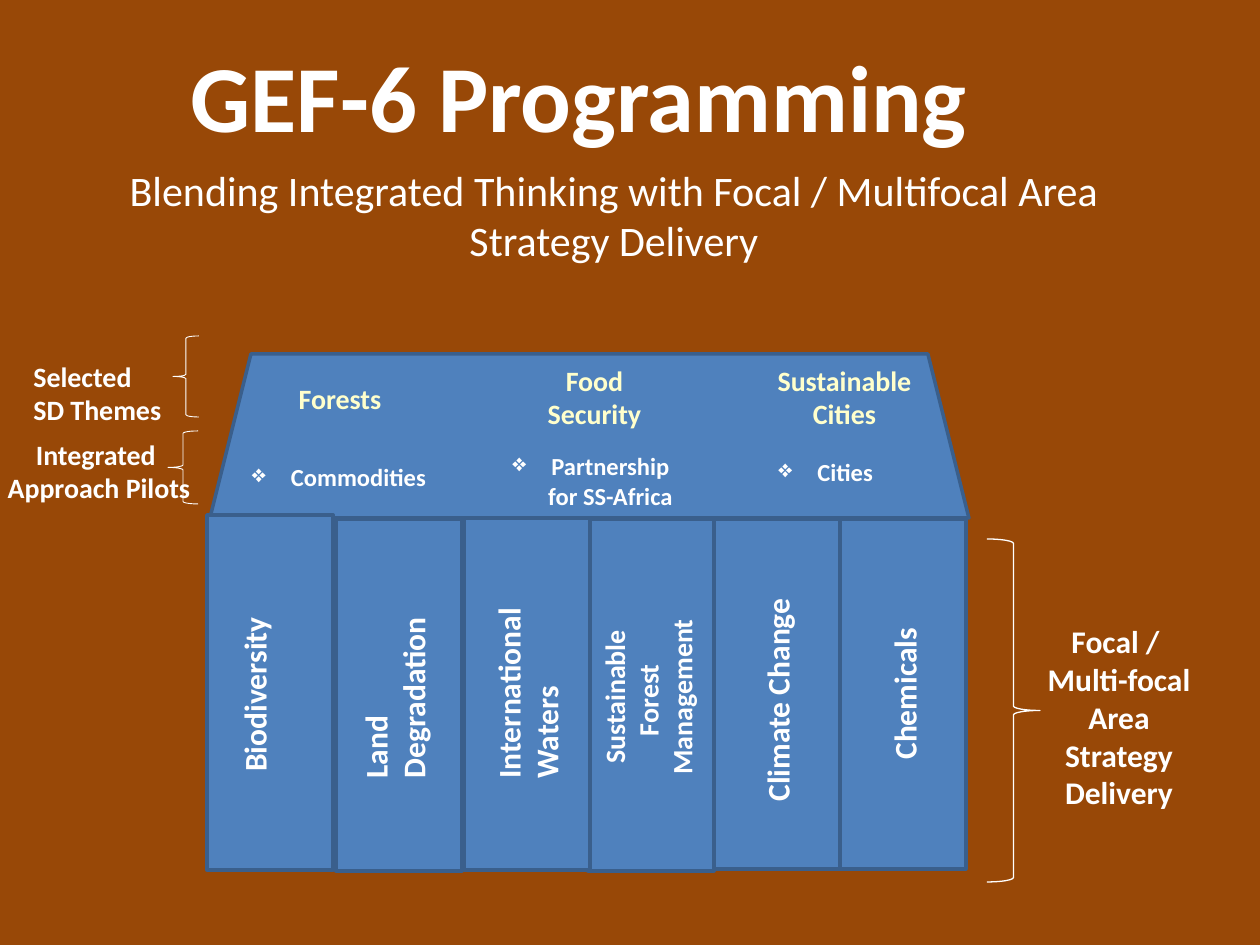
from lxml.etree import SubElement
from pptx import Presentation
from pptx.dml.color import RGBColor
from pptx.enum.shapes import MSO_SHAPE
from pptx.enum.text import MSO_ANCHOR, MSO_AUTO_SIZE, PP_ALIGN
from pptx.oxml.ns import qn
from pptx.util import Emu, Pt

COLORS = {
    "background": "984807",
    "block": "4F81BD",
    "edge": "3A5F8C",
    "text": "FFFFFF",
    "theme": "FFFFCC",
}
SLIDE_SIZE = (1260, 945)
BULLET_INDENT = 39

TITLE = ("GEF-6 Programming", (174, 32, 810, 127))
SUBTITLE = (
    "Blending Integrated Thinking with Focal / Multifocal Area Strategy Delivery",
    (105, 158, 1018, 115),
)
ROOF = (210, 354, 759, 164)
PILLARS = [
    ("Biodiversity", (207, 515, 126, 355), (229, 616, 63, 168), {}),
    ("Land \nDegradation", (336, 519, 126, 352), (350, 616, 102, 175), {}),
    ("International \nWaters", (464, 518, 126, 352), (483, 599, 102, 192), {}),
    ("Sustainable\nForest \nManagement", (588, 519, 126, 352), (591, 612, 127, 170),
     {"size": 16, "align": PP_ALIGN.CENTER}),
    ("Climate Change", (714, 519, 126, 350), (752, 597, 63, 217), {}),
    ("Chemicals", (840, 519, 126, 350), (879, 627, 63, 145), {}),
]
THEMES = [
    ("Forests", (285, 375, 110, 47)),
    ("Food\nSecurity", (534, 357, 121, 81)),
    ("Sustainable\nCities", (764, 357, 161, 81)),
]
PILOTS = [
    ("Commodities", (238, 456, 202, 43), PP_ALIGN.CENTER, 0),
    ("Partnership\nfor SS-Africa", (432, 445, 255, 72), PP_ALIGN.CENTER, 1),
    ("Cities", (766, 451, 121, 43), PP_ALIGN.LEFT, 0),
]
SIDE_LABELS = [
    (["Selected \nSD Themes"], (21, 353, 155, 81), 16, PP_ALIGN.LEFT),
    (["Integrated \nApproach Pilots"], (-6, 431, 210, 81), 16, PP_ALIGN.CENTER),
    (["Focal / ", "Multi-focal\nArea\nStrategy\nDelivery"], (1034, 616, 170, 204), 18,
     PP_ALIGN.CENTER),
]
BRACES = [
    (MSO_SHAPE.LEFT_BRACE, (173, 336, 26, 81), 0.5),
    (MSO_SHAPE.LEFT_BRACE, (168, 431, 30, 73), 0.5),
    (MSO_SHAPE.RIGHT_BRACE, (987, 539, 53, 343), 0.75),
]


def px(value):
    return Emu(round(value * 914400 / 126))


def color(name):
    return RGBColor.from_string(COLORS[name])


def add_bullet(paragraph, level):
    paragraph.level = level
    properties = paragraph._p.get_or_add_pPr()
    properties.set("marL", str(px(BULLET_INDENT + 63 * level)))
    properties.set("indent", str(px(-BULLET_INDENT)))
    SubElement(properties, qn("a:buChar")).set("char", "❖")


def write_text(shape, paragraphs, size=18, bold=True, tint="text", align=PP_ALIGN.LEFT,
               wrap=False, vertical=False, bullet_level=None):
    frame = shape.text_frame
    frame.word_wrap = wrap
    frame.auto_size = MSO_AUTO_SIZE.SHAPE_TO_FIT_TEXT
    frame.vertical_anchor = MSO_ANCHOR.TOP
    if vertical:
        frame._txBody.bodyPr.set("vert", "vert270")
    for index, text in enumerate(paragraphs):
        paragraph = frame.add_paragraph() if index else frame.paragraphs[0]
        paragraph.text = text
        paragraph.alignment = align
        if bullet_level is not None:
            add_bullet(paragraph, bullet_level)
        for run in paragraph.runs:
            run.font.name = "Calibri"
            run.font.size = Pt(size)
            run.font.bold = bold
            run.font.color.rgb = color(tint)


def add_text(slide, paragraphs, box, **style):
    write_text(slide.shapes.add_textbox(*map(px, box)), paragraphs, **style)


def add_shape(slide, kind, box, line, width, fill=None):
    shape = slide.shapes.add_shape(kind, *map(px, box))
    shape.shadow.inherit = False
    if fill:
        shape.fill.solid()
        shape.fill.fore_color.rgb = color(fill)
    else:
        shape.fill.background()
    shape.line.color.rgb = color(line)
    shape.line.width = Pt(width)


def main():
    presentation = Presentation()
    presentation.slide_width, presentation.slide_height = map(px, SLIDE_SIZE)
    slide = presentation.slides.add_slide(presentation.slide_layouts[5])
    slide.background.fill.solid()
    slide.background.fill.fore_color.rgb = color("background")

    text, box = TITLE
    title = slide.shapes.title
    title.left, title.top, title.width, title.height = map(px, box)
    write_text(title, [text], size=54, align=PP_ALIGN.CENTER)

    text, box = SUBTITLE
    add_text(slide, [text], box, size=24, bold=False, align=PP_ALIGN.CENTER, wrap=True)

    add_shape(slide, MSO_SHAPE.TRAPEZOID, ROOF, "edge", 2, fill="block")
    for _, box, _, _ in reversed(PILLARS):
        add_shape(slide, MSO_SHAPE.RECTANGLE, box, "edge", 2, fill="block")
    for text, _, box, style in PILLARS:
        add_text(slide, [text], box, vertical=True, **style)
    for text, box in THEMES:
        add_text(slide, [text], box, size=16, tint="theme", align=PP_ALIGN.CENTER)
    for text, box, align, level in PILOTS:
        add_text(slide, [text], box, size=14, align=align, bullet_level=level)
    for paragraphs, box, size, align in SIDE_LABELS:
        add_text(slide, paragraphs, box, size=size, align=align)
    for kind, box, width in BRACES:
        add_shape(slide, kind, box, "text", width)

    presentation.save("out.pptx")


if __name__ == "__main__":
    main()
